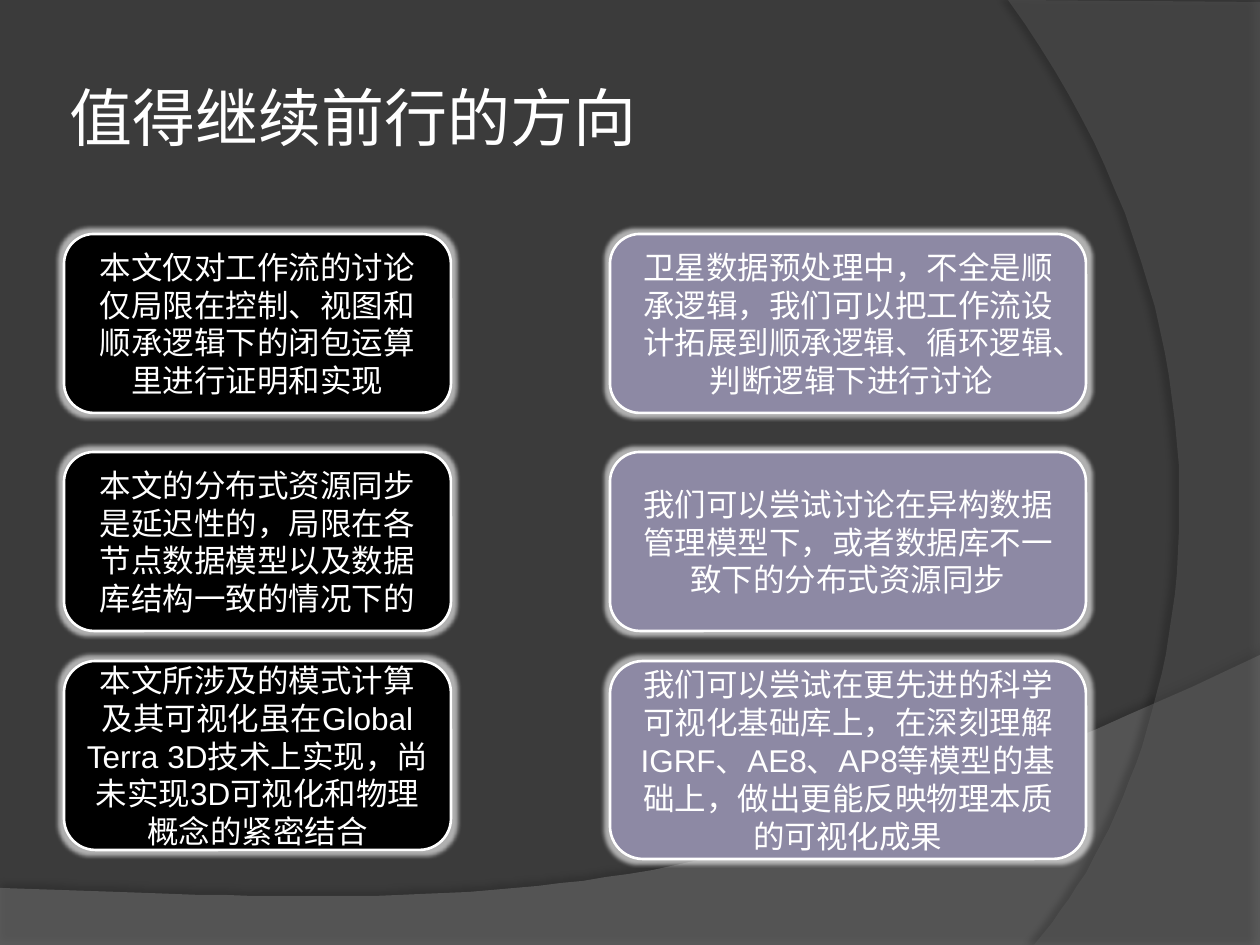
from lxml import etree
from pptx import Presentation
from pptx.dml.color import RGBColor
from pptx.enum.shapes import MSO_SHAPE
from pptx.enum.text import MSO_ANCHOR, PP_ALIGN
from pptx.oxml.ns import qn
from pptx.util import Pt

ROUND = MSO_SHAPE.ROUNDED_RECTANGLE
MIDDLE = MSO_ANCHOR.MIDDLE
LEFT, CENTER = PP_ALIGN.LEFT, PP_ALIGN.CENTER
SCALE = 914400 / 126  # EMU per px
COLORS = {"back": "3B3B3B", "wave": "7F7F7F", "arc": "5E5E5E", "white": "FFFFFF",
          "black": "000000", "mauve": "8D89A4"}


def px(n):
    return round(n * SCALE)


def rgb(name):
    return RGBColor.from_string(COLORS[name])


def write(shape, text, size=18, font="Arial", color="white", align=CENTER):
    frame = shape.text_frame
    frame.word_wrap = True
    frame.vertical_anchor = MIDDLE
    para = frame.paragraphs[0]
    para.alignment = align
    run = para.add_run()
    run.text = text
    run.font.size = Pt(size)
    run.font.name = font
    run.font.color.rgb = rgb(color)
    return frame


def curve(a, b, c, d, steps=48):
    """Points on a cubic curve from a to d, without a."""
    pts = []
    for i in range(1, steps + 1):
        t = i / steps
        u = 1 - t
        pts.append(tuple(u**3 * p + 3 * u * u * t * q + 3 * u * t * t * r + t**3 * s
                         for p, q, r, s in zip(a, b, c, d)))
    return pts


class Deck:
    def __init__(self, wide, high):
        self.prs = Presentation()
        self.prs.slide_width, self.prs.slide_height = px(wide), px(high)
        self.slide = self.prs.slides.add_slide(self.prs.slide_layouts[6])
        self.shapes = self.slide.shapes
        fill = self.slide.background.fill
        fill.solid()
        fill.fore_color.rgb = rgb("back")

    def paint(self, shape, color):
        shape.shadow.inherit = False
        shape.fill.solid()
        shape.fill.fore_color.rgb = rgb(color)

    def alpha(self, node, part):
        etree.SubElement(node, qn("a:alpha"), val=str(part * 1000))

    def effect(self, shape, kind, color, part, **attrs):
        effects = shape._element.spPr.find(qn("a:effectLst"))
        node = etree.SubElement(effects, qn(kind), **attrs)
        self.alpha(etree.SubElement(node, qn("a:srgbClr"), val=COLORS[color]), part)

    def sweep(self, pts, color, part, dark, dist, angle):
        path = self.shapes.build_freeform(*pts[0], scale=SCALE)
        path.add_line_segments(pts[1:], close=True)
        shape = path.convert_to_shape()
        self.paint(shape, color)
        shape.line.fill.background()
        self.alpha(shape._element.spPr.find(qn("a:solidFill"))[0], part)
        self.effect(shape, "a:outerShdw", "black", dark, blurRad=str(Pt(4)),
                    dist=str(Pt(dist)), dir=str(angle * 60000),
                    algn="ctr", rotWithShape="0")

    def title(self, x, y, w, h, text):
        box = self.shapes.add_textbox(px(x), px(y), px(w), px(h))
        frame = write(box, text, size=36, font="Comic Neue", align=LEFT)
        frame.margin_left = frame.margin_right = px(6)

    def card(self, x, y, w, h, text, color):
        shape = self.shapes.add_shape(ROUND, px(x), px(y), px(w), px(h))
        self.paint(shape, color)
        shape.line.color.rgb = rgb("white")
        shape.line.width = Pt(1.5)
        self.effect(shape, "a:glow", "white", 60, rad=str(Pt(5)))
        write(shape, text)


# Top and heights of each row, then the limit and the way forward
ROWS = [
    (234, 179, 179, "本文仅对工作流的讨论仅局限在控制、视图和顺承逻辑下的闭包运算里进行证明和实现",
     "卫星数据预处理中，不全是顺承逻辑，我们可以把工作流设计拓展到顺承逻辑、循环逻辑、 判断逻辑下进行讨论"),
    (452, 179, 179, "本文的分布式资源同步是延迟性的，局限在各节点数据模型以及数据库结构一致的情况下的",
     "我们可以尝试讨论在异构数据管理模型下，或者数据库不一致下的分布式资源同步"),
    (661, 189, 198, "本文所涉及的模式计算及其可视化虽在Global Terra 3D技术上实现，尚未实现3D可视化和物理概念的紧密结合",
     "我们可以尝试在更先进的科学可视化基础库上，在深刻理解IGRF、AE8、AP8等模型的基础上，做出更能反映物理本质的可视化成果"),
]


def main():
    deck = Deck(1260, 945)

    # Background sweeps
    wave = curve((1260, 655), (704, 919), (493, 906), (0, 888))
    deck.sweep([(0, 945), (1260, 945), (1260, 655)] + wave, "wave", 45, 35, 3.5, 270)
    arc = curve((1034, 945), (1178, 780), (1283, 378), (1008, 0))
    deck.sweep([(1260, 2), (1260, 945), (1034, 945)] + arc, "arc", 40, 45, 4, 180)

    # Title
    deck.title(63, 38, 1029, 157, "值得继续前行的方向")

    # Limits on the left, directions on the right
    for top, low, high, limit, way in ROWS:
        deck.card(64, top, 387, low, limit, "black")
        deck.card(610, top, 476, high, way, "mauve")

    deck.prs.save("out.pptx")


if __name__ == "__main__":
    main()
